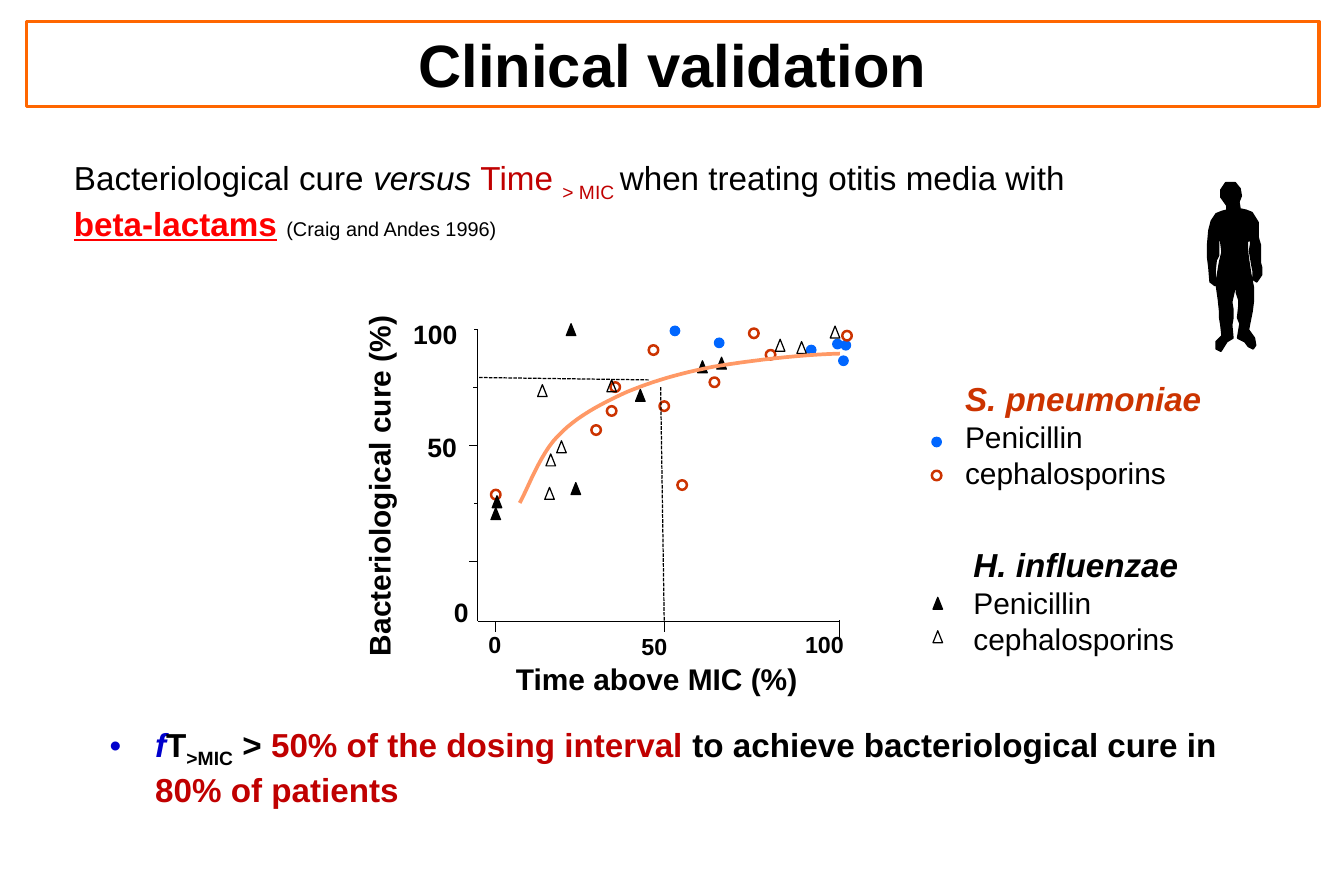
import pptx
import pptx.util
import pptx.dml.color
import pptx.enum.dml
import pptx.enum.shapes
import pptx.enum.text
import lxml.etree

Inches = pptx.util.Inches
Pt = pptx.util.Pt
SHAPE = pptx.enum.shapes.MSO_SHAPE
BLACK, RED, ORANGE, BLUE = "000000", "C00000", "CC3300", "0066FF"

MARKERS = {
    "pneumoniae penicillin": (SHAPE.OVAL, 0.08, BLUE, BLUE, 0.75),
    "pneumoniae cephalosporins": (SHAPE.OVAL, 0.08, None, ORANGE, 1.5),
    "influenzae penicillin": (SHAPE.ISOSCELES_TRIANGLE, 0.1, BLACK, BLACK, 0.75),
    "influenzae cephalosporins": (SHAPE.ISOSCELES_TRIANGLE, 0.1, None, BLACK, 0.75),
}
POINTS = {
    "pneumoniae penicillin": [
        (1.98, 0.08), (2.75, 0.14), (2.97, 0.09), (1.61, -0.02), (3.04, 0.1), (3.02, 0.23)],
    "pneumoniae cephalosporins": [
        (3.05, 0.02), (2.41, 0.18), (2.27, 0), (1.94, 0.41), (1.43, 0.14), (1.52, 0.61),
        (1.67, 1.27), (1.08, 0.65), (0.95, 0.81), (1.11, 0.45), (0.11, 1.35)],
    "influenzae penicillin": [
        (0.78, 1.29), (0.11, 1.5), (0.74, -0.04), (1.32, 0.51), (1.84, 0.27), (2, 0.24),
        (0.12, 1.4)],
    "influenzae cephalosporins": [
        (0.56, 1.33), (0.57, 1.05), (0.66, 0.94), (0.5, 0.47), (2.49, 0.09), (2.67, 0.11),
        (2.95, -0.02), (1.08, 0.43)],
}
TREND = [(0.35, 1.46), (0.41, 1.36), (0.52, 1.05), (0.67, 0.9), (0.82, 0.74), (1.03, 0.63),
         (1.25, 0.53), (1.47, 0.44), (1.67, 0.38), (1.97, 0.32), (2.27, 0.27), (2.68, 0.22),
         (3.03, 0.21)]
BODY = [
    (16, 20), (11, 13), (11, 7), (15, 1), (23, 1), (27, 6), (28, 12), (26, 17), (27, 23),
    (32, 24), (37, 26), (42, 34), (42, 40), (42, 46), (43, 50), (44, 53), (44, 56), (44, 63),
    (44, 68), (45, 72), (45, 78), (41, 84), (38, 82), (38, 75), (37, 70), (36, 64), (35, 58),
    (36, 52), (36, 49), (33, 50), (33, 57), (34, 65), (36, 78), (38, 88), (38, 96), (38, 101),
    (37, 109), (34, 124), (39, 131), (40, 137), (38, 140), (34, 138), (31, 134), (25, 131),
    (26, 125), (27, 119), (25, 114), (26, 105), (26, 99), (24, 93), (25, 84), (22, 92),
    (20, 101), (21, 107), (21, 114), (20, 120), (21, 131), (16, 134), (11, 142), (7, 140),
    (7, 134), (12, 129), (11, 120), (10, 114), (10, 109), (9, 99), (7, 85), (10, 67), (12, 59),
    (11, 51), (11, 48), (9, 50), (9, 57), (9, 62), (7, 66), (6, 75), (6, 87), (2, 84), (1, 72),
    (0, 64), (0, 52), (1, 41), (3, 33), (7, 27), (12, 25), (16, 24)]


def rgb(value):
    return pptx.dml.color.RGBColor.from_string(value)


def paint(sp, fill, line, width):
    sp.shadow.inherit = False
    if fill:
        sp.fill.solid()
        sp.fill.fore_color.rgb = rgb(fill)
    else:
        sp.fill.background()
    sp.line.color.rgb = rgb(line)
    sp.line.width = Pt(width)


def add_run(p, text, size=18, color=BLACK, bold=False, italic=False, underline=False, sub=False):
    r = p.add_run()
    r.text = text
    f = r.font
    f.name, f.size, f.bold, f.italic = "Arial", Pt(size), bold, italic
    f.color.rgb = rgb(color)
    if underline:
        f.underline = True
    if sub:
        r._r.get_or_add_rPr().set("baseline", "-25000")


def add_text(s, box, paragraphs, wrap=False, **fmt):
    sp = s.shapes.add_textbox(*map(Inches, box))
    tf = sp.text_frame
    tf.word_wrap = wrap
    if not wrap:
        tf.auto_size = pptx.enum.text.MSO_AUTO_SIZE.SHAPE_TO_FIT_TEXT
    if isinstance(paragraphs, str):
        paragraphs = [[(paragraphs, {})]]
    for i, runs in enumerate(paragraphs):
        p = tf.add_paragraph() if i else tf.paragraphs[0]
        for text, own in runs:
            add_run(p, text, **{**fmt, **own})
    return sp


def add_line(s, x1, y1, x2, y2, dashed=False):
    c = s.shapes.add_connector(pptx.enum.shapes.MSO_CONNECTOR.STRAIGHT,
                               *map(Inches, (x1, y1, x2, y2)))
    c.line.color.rgb = rgb(BLACK)
    c.line.width = Pt(0.75)
    if dashed:
        c.line.dash_style = pptx.enum.dml.MSO_LINE.SQUARE_DOT
    lxml.etree.SubElement(c._element.spPr, pptx.oxml.ns.qn("a:effectLst"))


def add_outline(s, points, fill, line, width, close):
    points = [(Inches(x), Inches(y)) for x, y in points]
    builder = s.shapes.build_freeform(*points[0])
    builder.add_line_segments(points[1:], close=close)
    paint(builder.convert_to_shape(), fill, line, width)


def add_marker(s, name, x, y):
    kind, height, fill, line, width = MARKERS[name]
    sp = s.shapes.add_shape(kind, *map(Inches, (x, y, 0.08, height)))
    paint(sp, fill, line, width)


def curve_points(controls, steps=12):
    points = [controls[0]]
    for i in range(0, len(controls) - 1, 3):
        a, b, c, d = controls[i:i + 4]
        for n in range(1, steps + 1):
            t = n / steps
            u = 1 - t
            points.append(tuple(u**3 * a[k] + 3 * u * u * t * b[k] + 3 * u * t * t * c[k]
                                + t**3 * d[k] for k in (0, 1)))
    return points


def add_title(s, box):
    sp = s.shapes.add_shape(SHAPE.RECTANGLE, *map(Inches, box))
    paint(sp, None, "FF6600", 2)
    tf = sp.text_frame
    tf.word_wrap = True
    tf.margin_left = tf.margin_right = Inches(0.06)
    tf.vertical_anchor = pptx.enum.text.MSO_ANCHOR.MIDDLE
    p = tf.paragraphs[0]
    p.alignment = pptx.enum.text.PP_ALIGN.CENTER
    add_run(p, "Clinical validation", size=36, bold=True)


def add_intro(s, box):
    add_text(s, box, [[
        ("Bacteriological cure ", {}), ("versus ", {"italic": True}), ("Time ", {"color": RED}),
        ("> MIC ", {"color": RED, "sub": True}), ("when treating otitis media with ", {}),
        ("beta-lactams", {"color": "FF0000", "bold": True, "underline": True}),
        (" ", {"color": RED}), ("(Craig and Andes 1996)", {"size": 12})]], wrap=True, size=20)


def add_conclusion(s, box):
    sp = add_text(s, box, [[
        ("f", {"color": "0000CC", "italic": True}), ("T", {}), (">MIC", {"sub": True}),
        (" > ", {}), ("50% of the dosing interval ", {"color": RED}),
        ("to achieve bacteriological cure in ", {}), ("80% of patients", {"color": RED})]],
        wrap=True, size=20, bold=True)
    pPr = sp.text_frame.paragraphs[0]._p.get_or_add_pPr()
    pPr.set("marL", str(Inches(0.38)))
    pPr.set("indent", str(Inches(-0.38)))
    for tag, key, value in (("a:buFont", "typeface", "Arial"), ("a:buChar", "char", "•")):
        lxml.etree.SubElement(pPr, pptx.oxml.ns.qn(tag)).set(key, value)


def add_person(s, box):
    x, y = box[:2]
    add_outline(s, [(x + dx / 100, y + dy / 100) for dx, dy in BODY], BLACK, BLACK, 1, True)


def add_plot(s, box):
    x, y, w, h = box
    add_line(s, x, y + h, x, y)
    add_line(s, x, y + h, x + w, y + h)
    for dx, top, bottom in ((0.15, 0.01, 0.09), (1.56, 0.01, 0.09), (w, -0.01, 0.14)):
        add_line(s, x + dx, y + h + top, x + dx, y + h + bottom)
    for i, length in enumerate((0.03, 0.04, 0.07, 0.03, 0.07)):
        tick = y + 0.01 + 0.485 * i
        add_line(s, x - length, tick, x, tick)
    for name, points in POINTS.items():
        for dx, dy in points:
            add_marker(s, name, x + dx, y + dy)
    add_outline(s, [(x + dx, y + dy) for dx, dy in curve_points(TREND)],
                None, "FF9966", 2.25, False)
    for label, dx, dy, width, size in (
            ("100", -0.64, -0.14, 0.57, 16), ("50", -0.52, 0.81, 0.45, 16),
            ("0", -0.3, 2.19, 0.32, 16), ("0", -0.01, 2.48, 0.31, 14),
            ("50", 1.27, 2.49, 0.42, 14), ("100", 2.64, 2.48, 0.55, 14),
            ("Time above MIC (%)", 0.22, 2.73, 2.56, 18)):
        add_text(s, (x + dx, y + dy, width, size / 45), label, size=size, bold=True)
    sp = add_text(s, (x - 2.37, y + 1.1, 3.08, 0.4), "Bacteriological cure (%)", bold=True)
    sp.rotation = 270
    add_line(s, x + 0.01, y + 0.41, x + 1.43, y + 0.43, dashed=True)
    add_line(s, x + 1.53, y + 0.49, x + 1.56, y + h, dashed=True)


def add_legend(s, box, species, color, indent, first):
    x, y, w, h = box
    add_text(s, (x + indent, y, w - indent, h), [
        [(species, {"size": 20, "color": color, "bold": True, "italic": True})],
        [("Penicillin", {})], [("cephalosporins", {})]])
    for i, drug in enumerate(("penicillin", "cephalosporins")):
        add_marker(s, species.split()[1] + " " + drug, x, y + first + 0.28 * i)


def main():
    prs = pptx.Presentation()
    prs.slide_width, prs.slide_height = Inches(11.25), Inches(7.5)
    s = prs.slides.add_slide(prs.slide_layouts[6])
    add_title(s, (0.22, 0.18, 10.82, 0.71))
    add_conclusion(s, (0.82, 6.01, 9.59, 1.22))
    add_person(s, (10.11, 1.52, 0.46, 1.43))
    add_intro(s, (0.52, 1.27, 9.18, 0.77))
    add_plot(s, (4, 2.75, 3.03, 2.45))
    add_legend(s, (7.8, 3.12, 2.38, 1.04), "S. pneumoniae", ORANGE, 0.18, 0.54)
    add_legend(s, (7.81, 4.51, 2.17, 1.04), "H. influenzae", BLACK, 0.24, 0.49)
    prs.save("out.pptx")


if __name__ == "__main__":
    main()
